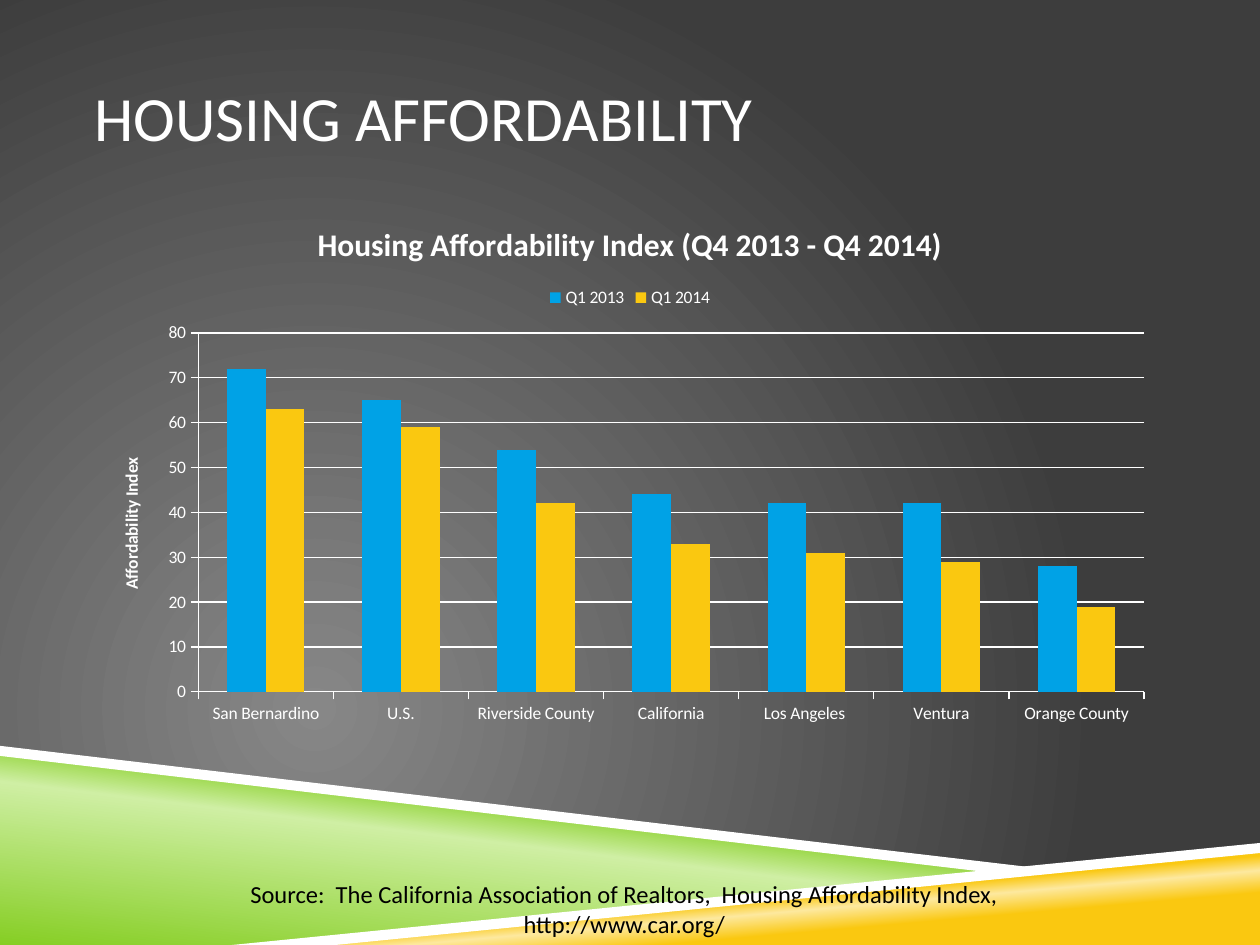
from pptx import Presentation
from pptx.chart.data import CategoryChartData
from pptx.dml.color import RGBColor
from pptx.enum.chart import XL_CHART_TYPE as ChartType
from pptx.enum.chart import XL_LEGEND_POSITION as LegendPosition
from pptx.enum.chart import XL_TICK_MARK as TickMark
from pptx.enum.text import MSO_ANCHOR as Anchor
from pptx.enum.text import PP_ALIGN as Align
from pptx.oxml import parse_xml
from pptx.oxml.ns import nsdecls, qn
from pptx.util import Inches, Pt

WIDTH, HEIGHT = Inches(10), Inches(7.5)
FONT = "Calibri"

WHITE = RGBColor(0xFF, 0xFF, 0xFF)
BLACK = RGBColor(0x00, 0x00, 0x00)
GRAY = RGBColor(0x87, 0x87, 0x87)
CHARCOAL = RGBColor(0x3D, 0x3D, 0x3D)
GREEN = RGBColor(0x86, 0xCE, 0x24)
PALE_GREEN = RGBColor(0xCF, 0xEF, 0xA4)
GOLD = RGBColor(0xFA, 0xC8, 0x10)
PALE_GOLD = RGBColor(0xFD, 0xE9, 0x9F)
BLUE = RGBColor(0x00, 0xA2, 0xE6)

# Boxes and corners are percentages of the slide's width and height
TITLE_BOX = (7.5, 4, 85, 16.67)
CHART_BOX = (7.5, 21.07, 85, 56.67)
SOURCE_BOX = (8.3, 92.4, 82.5, 7.6)

CATEGORIES = ["San Bernardino", "U.S.", "Riverside County", "California",
              "Los Angeles ", "Ventura", "Orange County"]
SERIES = [("Q1 2013", BLUE, [72, 65, 54, 44, 42, 42, 28]),
          ("Q1 2014", GOLD, [63, 59, 42, 33, 31, 29, 19])]


def point(x, y):
    return round(WIDTH * x / 100), round(HEIGHT * y / 100)


def place(box):
    left, top, width, height = box
    return point(left, top) + point(width, height)


def style_font(font, size, color, bold=False):
    font.name, font.size, font.bold = FONT, Pt(size), bold
    font.color.rgb = color


def add_run(paragraph, text, size, color, bold=False):
    run = paragraph.add_run()
    run.text = text
    style_font(run.font, size, color, bold)


def set_gradient(fill, owner, stops, direction):
    """Give the fill its colour stops and a direction element."""
    fill.gradient()
    gradient = owner.find(".//" + qn("a:gradFill"))
    for child in list(gradient):
        gradient.remove(child)
    stop_xml = "".join(
        f'<a:gs pos="{share * 1000}"><a:srgbClr val="{color}"/></a:gs>'
        for share, color in stops)
    gradient.append(parse_xml(f'<a:gsLst {nsdecls("a")}>{stop_xml}</a:gsLst>'))
    gradient.append(parse_xml(direction))


def linear(degrees):
    return f'<a:lin {nsdecls("a")} ang="{degrees * 60000}" scaled="0"/>'


def add_background(slide):
    circle = (f'<a:path {nsdecls("a")} path="circle"><a:fillToRect l="50000" '
              't="100000" r="100000" b="50000"/></a:path>')
    set_gradient(slide.background.fill, slide.element,
                 [(0, GRAY), (100, CHARCOAL)], circle)


def add_band(slide, corners):
    start, *others = [point(x, y) for x, y in corners]
    builder = slide.shapes.build_freeform(*start)
    builder.add_line_segments(others, close=True)
    band = builder.convert_to_shape()
    band.shadow.inherit = False
    band.line.fill.background()
    return band


def add_bands(slide):
    # Coloured wedges
    green = add_band(slide, [(0, 79.6), (79.2, 92.27), (20, 100), (0, 100)])
    set_gradient(green.fill, green.element,
                 [(0, GREEN), (52, PALE_GREEN), (66, GREEN)], linear(277))
    gold = add_band(slide, [(19.8, 100), (100, 89.6), (100, 100)])
    set_gradient(gold.fill, gold.element,
                 [(28, GOLD), (40, PALE_GOLD), (48, GOLD)], linear(265))
    # White edges
    for corners in (
            [(0, 78.93), (0, 80), (79, 92.4), (83.2, 92)],
            [(100, 89.2), (18.4, 100), (26.6, 100), (100, 90.27)]):
        edge = add_band(slide, corners)
        edge.fill.solid()
        edge.fill.fore_color.rgb = WHITE


def add_title(slide, box):
    title = slide.shapes.title
    title.left, title.top, title.width, title.height = place(box)
    frame = title.text_frame
    frame.margin_left = frame.margin_right = 0
    frame.vertical_anchor = Anchor.MIDDLE
    frame.paragraphs[0].alignment = Align.LEFT
    add_run(frame.paragraphs[0], "HOUSING AFFORDABILITY", 36, WHITE)


def add_affordability_chart(slide, box):
    data = CategoryChartData()
    data.categories = CATEGORIES
    for name, _, values in SERIES:
        data.add_series(name, values)
    chart = slide.shapes.add_chart(
        ChartType.COLUMN_CLUSTERED, *place(box), data).chart
    style_font(chart.font, 10, WHITE)

    chart.has_title = True
    add_run(chart.chart_title.text_frame.paragraphs[0],
            "Housing Affordability Index (Q4 2013 - Q4 2014)", 18, WHITE, True)
    chart.has_legend = True
    chart.legend.position = LegendPosition.TOP
    chart.legend.include_in_layout = False

    # Axes and gridlines
    value_axis = chart.value_axis
    value_axis.has_title = True
    add_run(value_axis.axis_title.text_frame.paragraphs[0],
            "Affordability Index", 10, WHITE, True)
    value_axis.minimum_scale, value_axis.maximum_scale = 0, 80
    value_axis.major_unit = 10
    value_axis.has_major_gridlines = True
    for axis in (chart.category_axis, value_axis):
        axis.major_tick_mark = TickMark.OUTSIDE
        axis.minor_tick_mark = TickMark.NONE
    for part in (chart.category_axis, value_axis, value_axis.major_gridlines):
        part.format.line.color.rgb = WHITE
        part.format.line.width = Pt(0.75)

    # Columns
    plot = chart.plots[0]
    plot.gap_width, plot.overlap = 150, 0
    plot.vary_by_categories = False
    for series, (_, color, _) in zip(plot.series, SERIES):
        series.format.fill.solid()
        series.format.fill.fore_color.rgb = color


def add_source(slide, box):
    frame = slide.shapes.add_textbox(*place(box)).text_frame
    frame.word_wrap = True
    lines = ["Source:  The California Association of Realtors,"
             "  Housing Affordability Index,",
             "http://www.car.org/"]
    for index, line in enumerate(lines):
        paragraph = frame.add_paragraph() if index else frame.paragraphs[0]
        paragraph.alignment = Align.CENTER
        add_run(paragraph, line, 14, BLACK)


def main():
    presentation = Presentation()
    presentation.slide_width, presentation.slide_height = WIDTH, HEIGHT
    slide = presentation.slides.add_slide(
        presentation.slide_layouts.get_by_name("Title Only"))
    add_background(slide)
    add_bands(slide)
    add_title(slide, TITLE_BOX)
    add_affordability_chart(slide, CHART_BOX)
    add_source(slide, SOURCE_BOX)
    presentation.save("out.pptx")


if __name__ == "__main__":
    main()
